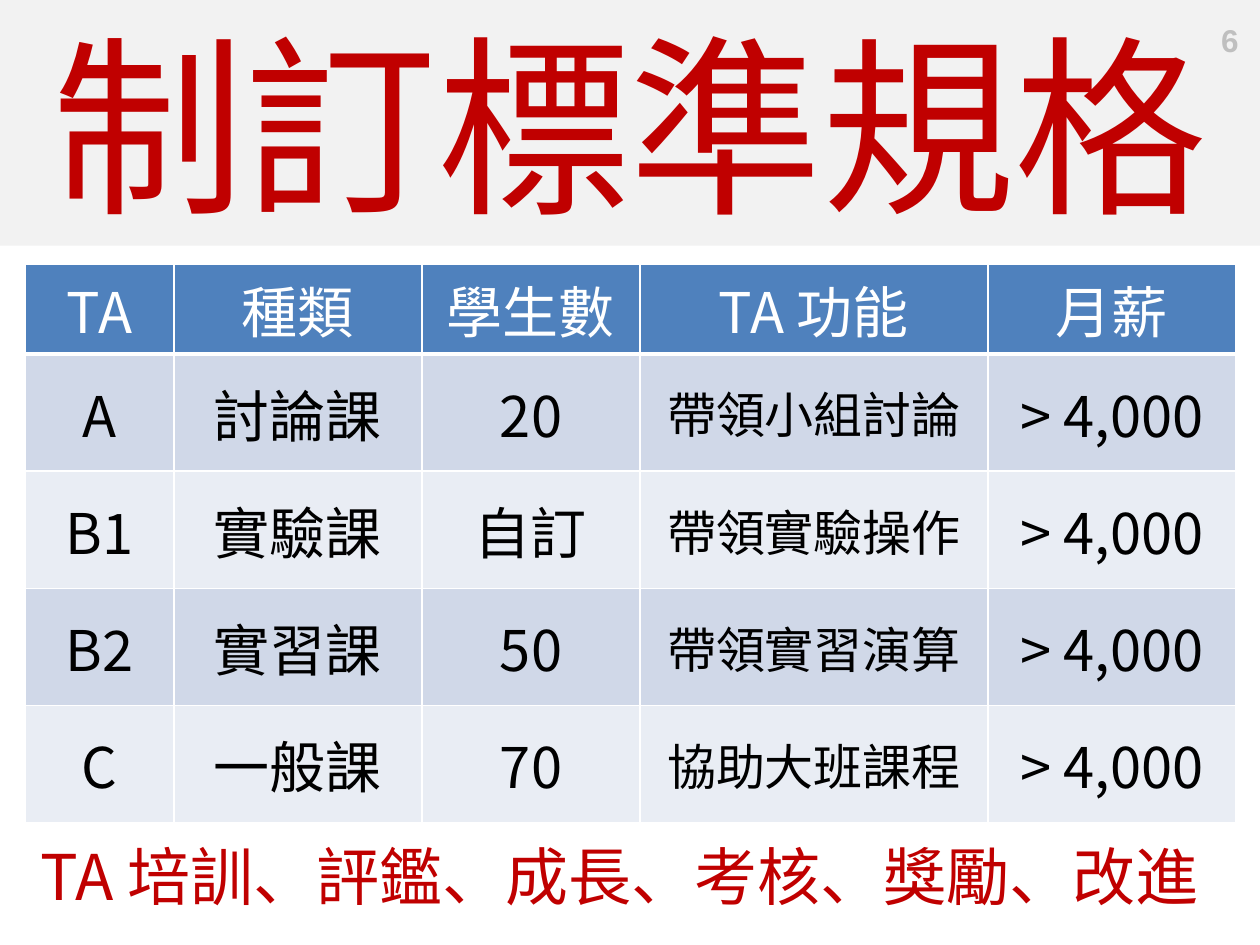
import dataclasses

import lxml.etree
import pptx
import pptx.dml.color
import pptx.enum.shapes
import pptx.enum.text
import pptx.oxml.ns
import pptx.util

Inches = pptx.util.Inches
Align = pptx.enum.text.PP_ALIGN
Anchor = pptx.enum.text.MSO_ANCHOR


@dataclasses.dataclass(frozen=True)
class Theme:
    red: str = "C00000"
    banner: str = "F2F2F2"
    header: str = "4F81BD"
    bands: tuple = ("D0D8E8", "E9EDF4")
    white: str = "FFFFFF"
    black: str = "000000"
    grey: str = "BFBFBF"
    title_font: str = "Noto Sans CJK SC"
    body_font: str = "Noto Sans CJK JP"
    duty_font: str = "Times New Roman"
    number_font: str = "Arial"
    title_size: int = 110
    summary_size: int = 36
    cell_size: int = 32
    duty_size: int = 28
    number_size: int = 18


THEME = Theme()
COLUMN_WIDTHS = (1.18, 1.97, 1.73, 2.76, 1.97)
HEADER_HEIGHT, ROW_HEIGHT = 0.71, 0.93
DUTY_COLUMN = 3
SALARY = "> 4,000"
HEADINGS = ("TA", "種類", "學生數", "TA 功能", "月薪")
GRADES = (
    ("A", "討論課", "20", "帶領小組討論", SALARY),
    ("B1", "實驗課", "自訂", "帶領實驗操作", SALARY),
    ("B2", "實習課", "50", "帶領實習演算", SALARY),
    ("C", "一般課", "70", "協助大班課程", SALARY),
)


def rgb(color):
    return pptx.dml.color.RGBColor.from_string(color)


def add_element(parent, tag, **attributes):
    return lxml.etree.SubElement(parent, pptx.oxml.ns.qn(tag), **attributes)


def write(frame, text, size, font, color, bold=False, align=Align.CENTER):
    paragraph = frame.paragraphs[0]
    paragraph.alignment = align
    run = paragraph.add_run()
    run.text = text
    run.font.size = pptx.util.Pt(size)
    run.font.bold = bold
    run.font.color.rgb = rgb(color)
    run.font.name = font
    # Chinese characters need their own typeface entry
    east_asian = THEME.body_font if font == THEME.duty_font else font
    add_element(run.font._element, "a:ea", typeface=east_asian)


def add_banner(slide, text):
    banner = slide.shapes.add_shape(
        pptx.enum.shapes.MSO_SHAPE.RECTANGLE, 0, 0, Inches(10), Inches(1.95))
    banner.shadow.inherit = False
    banner.fill.solid()
    banner.fill.fore_color.rgb = rgb(THEME.banner)
    banner.line.fill.background()
    banner.text_frame.word_wrap = True
    banner.text_frame.vertical_anchor = Anchor.MIDDLE
    write(banner.text_frame, text, THEME.title_size, THEME.title_font, THEME.red)


def add_label(slide, box, anchor, *text_style, **options):
    label = slide.shapes.add_textbox(*map(Inches, box))
    label.text_frame.word_wrap = False
    label.text_frame.vertical_anchor = anchor
    write(label.text_frame, *text_style, **options)


def set_borders(cell, top, bottom):
    properties = cell._tc.get_or_add_tcPr()
    for side, points in (("L", 1), ("R", 1), ("T", top), ("B", bottom)):
        line = add_element(properties, f"a:ln{side}", w=str(pptx.util.Pt(points)))
        fill = add_element(line, "a:solidFill")
        add_element(fill, "a:srgbClr", val=THEME.white)


def fill_cell(cell, row, column, text):
    heading = row == 0
    set_borders(cell, top=3 if row == 1 else 1, bottom=3 if heading else 1)
    cell.fill.solid()
    cell.fill.fore_color.rgb = rgb(THEME.header if heading else THEME.bands[(row - 1) % 2])
    cell.vertical_anchor = Anchor.MIDDLE
    cell.margin_top = cell.margin_bottom = Inches(0.03)
    duty = column == DUTY_COLUMN and not heading
    write(cell.text_frame, text,
          THEME.duty_size if duty else THEME.cell_size,
          THEME.duty_font if duty else THEME.body_font,
          THEME.white if heading else THEME.black)


def add_grade_table(slide):
    rows = (HEADINGS, *GRADES)
    heights = [HEADER_HEIGHT] + [ROW_HEIGHT] * len(GRADES)
    grades = slide.shapes.add_table(
        len(rows), len(HEADINGS), Inches(0.2), Inches(2.1),
        Inches(sum(COLUMN_WIDTHS)), Inches(sum(heights))).table
    for column, width in zip(grades.columns, COLUMN_WIDTHS):
        column.width = Inches(width)
    for row, height in zip(grades.rows, heights):
        row.height = Inches(height)
    for row, texts in enumerate(rows):
        for column, text in enumerate(texts):
            fill_cell(grades.cell(row, column), row, column, text)


def main():
    deck = pptx.Presentation()
    deck.slide_width, deck.slide_height = Inches(10), Inches(7.5)
    slide = deck.slides.add_slide(deck.slide_layouts[6])

    # Title and pay grades
    add_banner(slide, "制訂標準規格")
    add_grade_table(slide)

    # Summary line and page number
    add_label(slide, (0.22, 6.59, 9.59, 0.71), Anchor.MIDDLE,
              "TA 培訓、評鑑、成長、考核、獎勵、改進",
              THEME.summary_size, THEME.body_font, THEME.red, align=Align.LEFT)
    add_label(slide, (9.59, 0.12, 0.34, 0.4), Anchor.TOP,
              "6", THEME.number_size, THEME.number_font, THEME.grey, bold=True)

    deck.save("out.pptx")


if __name__ == "__main__":
    main()
